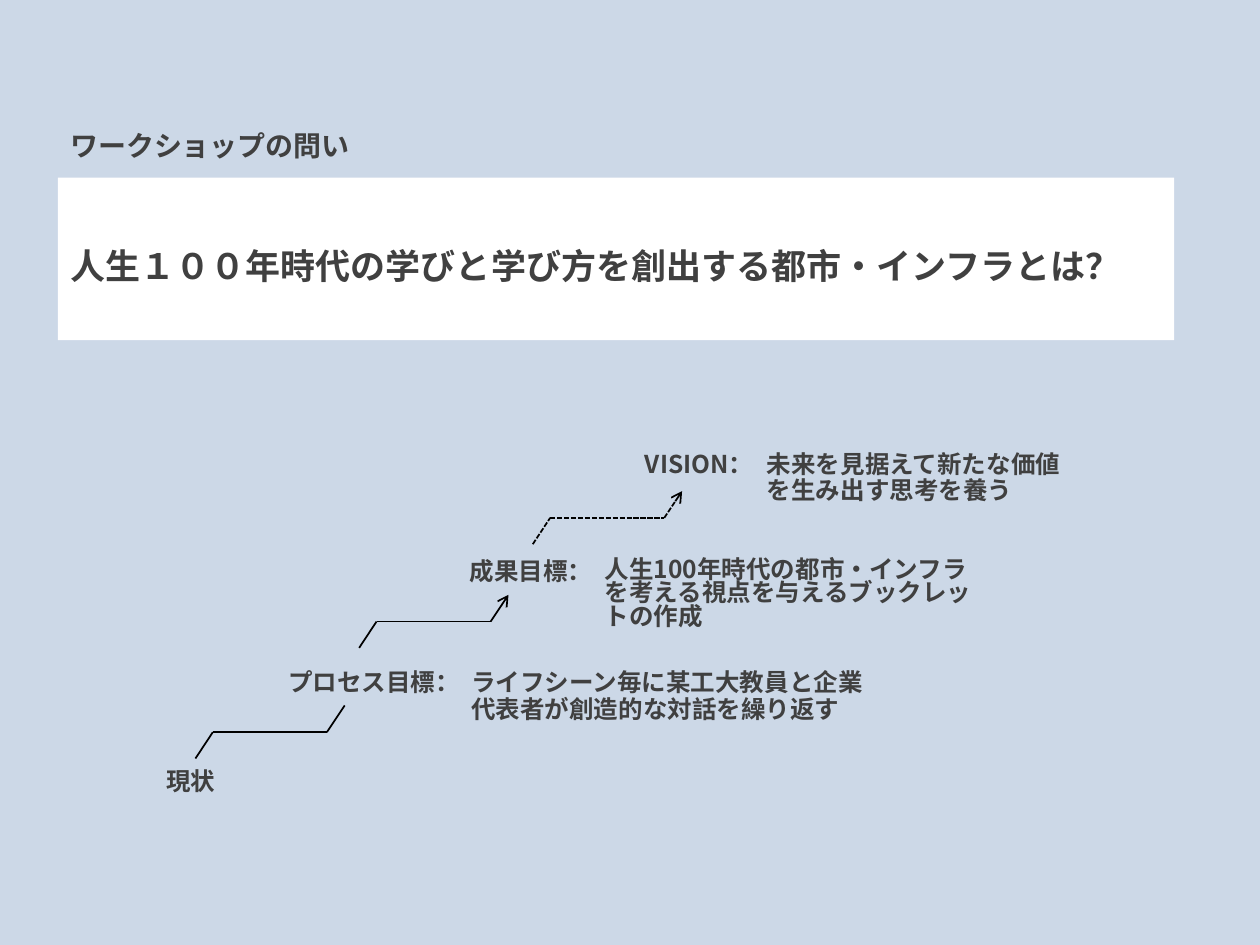
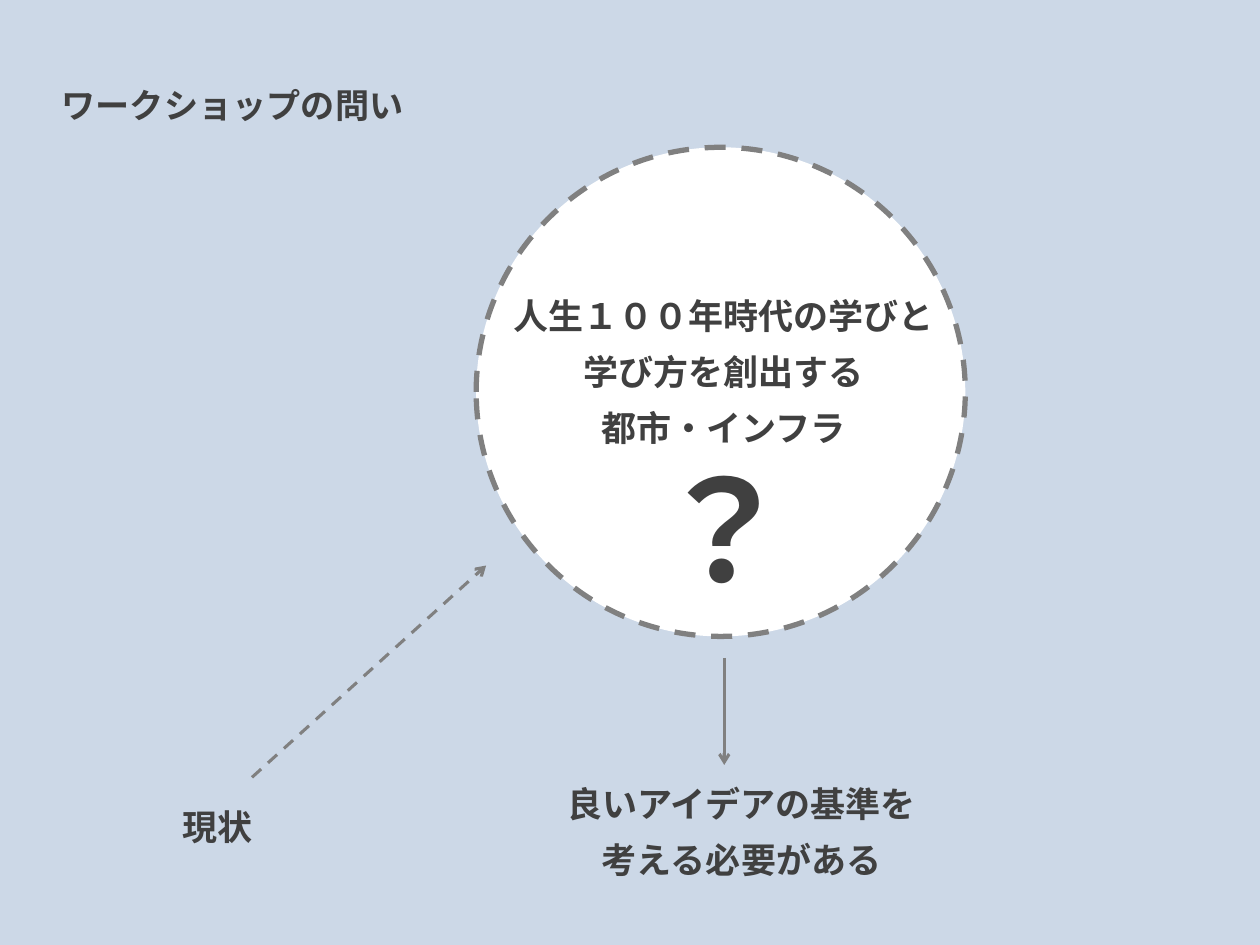
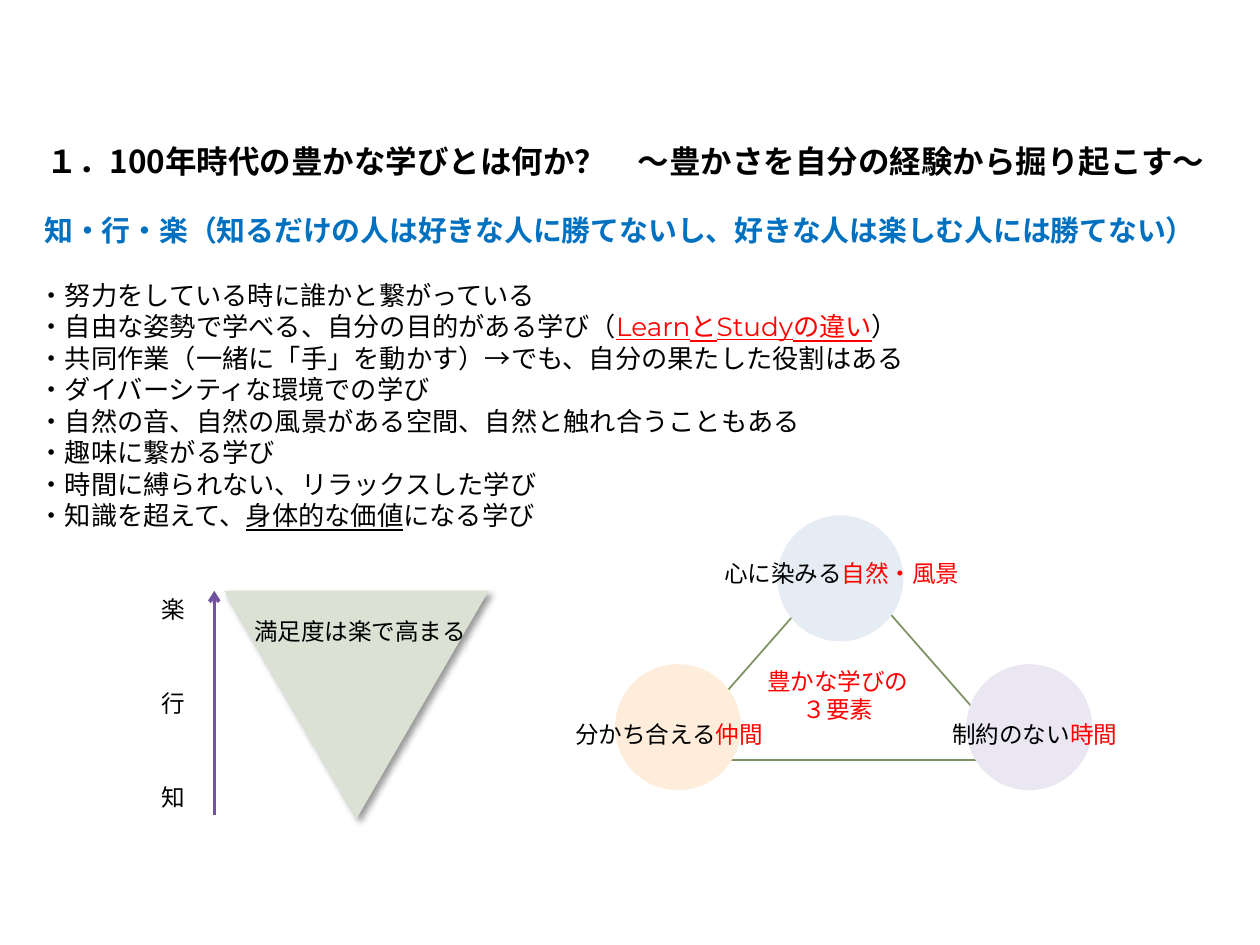
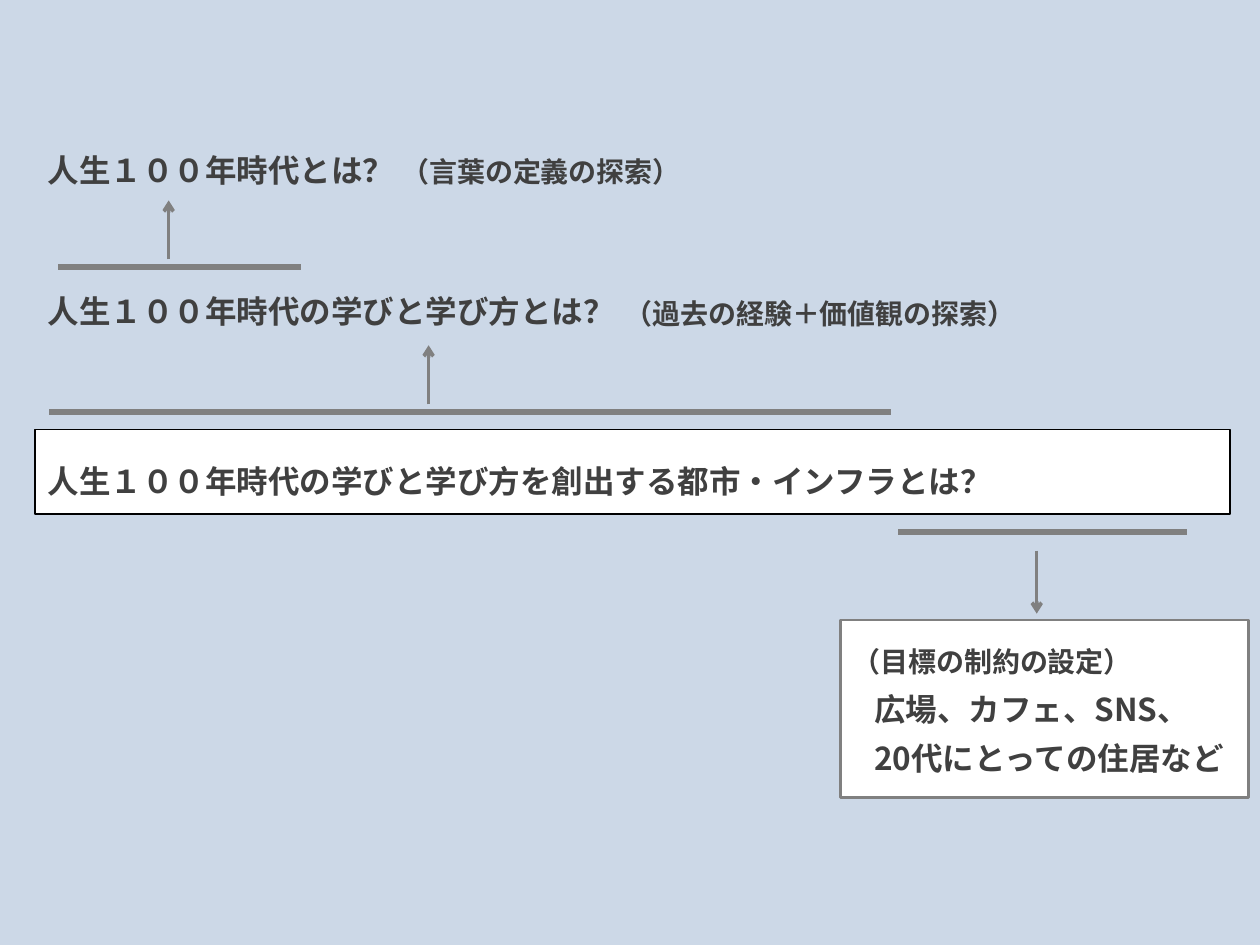
from dataclasses import dataclass

from lxml.etree import SubElement
from pptx import Presentation
from pptx.dml.color import RGBColor
from pptx.enum.dml import MSO_LINE
from pptx.enum.shapes import MSO_CONNECTOR, MSO_SHAPE
from pptx.enum.text import MSO_ANCHOR, MSO_AUTO_SIZE, PP_ALIGN
from pptx.oxml.ns import qn
from pptx.util import Cm, Pt


@dataclass(frozen=True)
class Theme:
    font: str = "Noto Sans CJK JP"
    latin: str = "Montserrat"
    bg: str = "CCD8E7"
    white: str = "FFFFFF"
    black: str = "000000"
    dark: str = "404040"
    gray: str = "808080"
    red: str = "FF0000"
    blue: str = "0070C0"
    green: str = "7D9263"
    pale_green: str = "DBE1D3"
    pale_blue: str = "E6ECF3"
    pale_purple: str = "EBE7F2"
    pale_orange: str = "FDEDDA"
    purple: str = "7153A1"
    mark: float = 80
    title: float = 20
    header: float = 19.5
    heading: float = 18
    quote: float = 16.5
    note: float = 16
    body: float = 15
    label: float = 14
    caption: float = 13.5


T = Theme()
TIGHT = {"spacing": 0.9, "before": 10}
MIDDLE = {"anchor": MSO_ANCHOR.MIDDLE, "spacing": Pt(32)}
CENTER = {**MIDDLE, "align": PP_ALIGN.CENTER}
PLAIN = {"color": T.black, "bold": False, "grow": True}


def box(shapes, at, paras=(), size=T.title, kind=None, fill=None, line=None, width=1, dash=None,
        anchor=MSO_ANCHOR.TOP, align=PP_ALIGN.LEFT, spacing=None, before=0,
        color=T.dark, bold=True, grow=False):
    """Add a text box, or a preset shape; a paragraph is a string or a list of (text, options)."""
    at = [Cm(v) for v in at]
    if kind is None:
        sp = shapes.add_textbox(*at)
    else:
        sp = shapes.add_shape(kind, *at)
        sp.shadow.inherit = False
        if fill:
            sp.fill.solid()
            sp.fill.fore_color.rgb = RGBColor.from_string(fill)
        else:
            sp.fill.background()
        if line:
            sp.line.color.rgb = RGBColor.from_string(line)
            sp.line.width = Pt(width)
            sp.line.dash_style = dash
        else:
            sp.line.fill.background()
    tf = sp.text_frame
    tf.word_wrap = True
    tf.vertical_anchor = anchor
    if grow:
        tf.auto_size = MSO_AUTO_SIZE.SHAPE_TO_FIT_TEXT
    for i, para in enumerate(paras):
        p = tf.add_paragraph() if i else tf.paragraphs[0]
        p.alignment, p.line_spacing, p.space_before = align, spacing, Pt(before)
        for text, opts in [(para, {})] if isinstance(para, str) else para:
            if text == "\n":
                p.add_line_break()
                continue
            r = p.add_run()
            r.text = text
            r.font.size = Pt(opts.get("size", size))
            r.font.bold = opts.get("bold", bold)
            r.font.underline = opts.get("underline")
            r.font.color.rgb = RGBColor.from_string(opts.get("color", color))
            r.font.name = opts.get("font", T.font)
            SubElement(r._r.get_or_add_rPr(), qn("a:ea"), typeface=T.font)
    return sp


def connect(shapes, start, end, color=T.gray, width=2, dash=None, arrow=True):
    ends = [Cm(v) for v in (*start, *end)]
    cn = shapes.add_connector(MSO_CONNECTOR.STRAIGHT, *ends)
    cn.line.color.rgb = RGBColor.from_string(color)
    cn.line.width = Pt(width)
    cn.line.dash_style = dash
    if arrow:
        SubElement(cn.line._get_or_add_ln(), qn("a:tailEnd"), type="arrow")
    SubElement(cn._element.spPr, qn("a:effectLst"))


prs = Presentation()
prs.slide_width, prs.slide_height = Cm(25.4), Cm(19.05)
blank = prs.slide_layouts[6]
master_fill = prs.slide_master.background.fill
master_fill.solid()
master_fill.fore_color.rgb = RGBColor.from_string(T.bg)

# Slide 1: workshop question and steps to the vision
shapes = prs.slides.add_slide(blank).shapes
box(shapes, (1.17, 3.58, 22.5, 3.28), ["人生１００年時代の学びと学び方を創出する都市・インフラとは？"],
    kind=MSO_SHAPE.RECTANGLE, fill=T.white, **MIDDLE)
box(shapes, (1.17, 2.36, 14.96, 1.22), ["ワークショップの問い"], T.note,
    **{**TIGHT, "anchor": MSO_ANCHOR.MIDDLE})

# Step names
for x, y, w, name in [
    (12.75, 8.99, 2.79, "VISION："),
    (9.22, 11.15, 3.33, "成果目標："),
    (5.56, 13.39, 4.67, "プロセス目標："),
    (3.1, 15.39, 2.01, "現状"),
]:
    box(shapes, (x, y, w, 0.84), [name], T.label, **TIGHT)

# Step descriptions
for x, y, w, spacing, goal in [
    (15.21, 8.99, 6.53, 0.9, "未来を見据えて新たな価値を生み出す思考を養う"),
    (11.94, 11.15, 7.92, 0.8, "人生100年時代の都市・インフラを考える視点を与えるブックレットの作成"),
    (9.25, 13.39, 8.76, 0.9, "ライフシーン毎に某工大教員と企業代表者が創造的な対話を繰り返す"),
]:
    box(shapes, (x, y, w, 1.7), [goal], T.label, spacing=spacing, before=10)

# Stair lines
stair = [(0, 0), (0.35, -0.53), (2.65, -0.53), (3.01, -1.07)]
for x, y, dash, arrow in [
    (3.94, 15.29, None, False),
    (7.24, 13.06, None, True),
    (10.74, 10.97, MSO_LINE.SQUARE_DOT, True),
]:
    grp = shapes.add_group_shape()
    pts = [(x + dx, y + dy) for dx, dy in stair]
    for i in range(3):
        connect(grp.shapes, pts[i], pts[i + 1], T.black, 1, dash, arrow and i == 2)

# Slide 2: the question as a circle
shapes = prs.slides.add_slide(blank).shapes
box(shapes, (9.6, 2.97, 9.86, 9.86), kind=MSO_SHAPE.OVAL, fill=T.white,
    line=T.gray, width=3, dash=MSO_LINE.DASH)
box(shapes, (0.99, 1.09, 17.65, 1.88), ["ワークショップの問い"], T.header,
    anchor=MSO_ANCHOR.MIDDLE, spacing=1.2)
box(shapes, (9.8, 5.31, 9.58, 4.09),
    [[("人生１００年時代の学びと学び方を創出する", {}), ("\n", {}), ("都市・インフラ", {})]], **CENTER)
box(shapes, (12.93, 9.55, 2.57, 4.37), ["？"], T.mark, **MIDDLE)
box(shapes, (3.43, 16.21, 2.01, 0.84), ["現状"], **TIGHT)
box(shapes, (10.16, 14.58, 9.58, 4.09), ["良いアイデアの基準を", "考える必要がある"], **CENTER)
connect(shapes, (5.08, 15.67), (9.8, 11.4), width=1.75, dash=MSO_LINE.DASH)
connect(shapes, (14.6, 13.26), (14.6, 15.42), width=1.75)

# Slide 3: what rich learning is
sl = prs.slides.add_slide(blank)
sl.background.fill.solid()
sl.background.fill.fore_color.rgb = RGBColor.from_string(T.white)
shapes = sl.shapes
box(shapes, (13.44, 11.28, 7.09, 4.04), kind=MSO_SHAPE.ISOSCELES_TRIANGLE, line=T.green)
for x, y, fill in [(15.67, 10.39, T.pale_blue), (19.48, 13.39, T.pale_purple),
                   (12.4, 13.39, T.pale_orange)]:
    box(shapes, (x, y, 2.54, 2.54), kind=MSO_SHAPE.OVAL, fill=fill)

# Heading and bullet list
red = {"color": T.red}
link = {**red, "underline": True}
link_latin = {**link, "font": T.latin}
box(shapes, (0.69, 2.74, 23.93, 1.02),
    ["１．100年時代の豊かな学びとは何か？　～豊かさを自分の経験から掘り起こす～"],
    T.heading, color=T.black, grow=True)
sp = box(shapes, (0.53, 4.17, 23.93, 6.73), [
    [("知・行・楽（知るだけの人は好きな人に勝てないし、好きな人は楽しむ人には勝てない）",
      {"size": T.quote, "color": T.blue, "bold": True})],
    "・努力をしている時に誰かと繋がっている",
    [("・自由な姿勢で学べる、自分の目的がある学び（", {}), ("Learn", link_latin), ("と", link),
     ("Study", link_latin), ("の違い", link), ("）", {})],
    "・共同作業（一緒に「手」を動かす）→でも、自分の果たした役割はある",
    "・ダイバーシティな環境での学び",
    "・自然の音、自然の風景がある空間、自然と触れ合うこともある",
    "・趣味に繋がる学び",
    "・時間に縛られない、リラックスした学び",
    [("・知識を超えて、", {}), ("身体的な価値", {"underline": True}), ("になる学び", {})],
], T.body, **PLAIN)
quote, *bullets = sp.text_frame.paragraphs
quote.alignment = PP_ALIGN.CENTER
bullets[0].space_before = Pt(18)
for p in bullets:
    pPr = p._p.get_or_add_pPr()
    pPr.set("marL", str(Cm(0.38)))
    pPr.set("indent", str(-Cm(0.38)))

# Satisfaction scale
for i, level in enumerate("楽行知"):
    box(shapes, (3, 11.86 + 1.9 * i, 3.05, 0.84), [level], T.caption, **PLAIN)
sp = box(shapes, (4.52, 11.91, 5.33, 4.6), kind=MSO_SHAPE.ISOSCELES_TRIANGLE, fill=T.pale_green)
sp.rotation = 180
shadow = SubElement(sp._element.spPr.find(qn("a:effectLst")), qn("a:outerShdw"),
                    blurRad=str(Pt(4)), dist=str(Pt(3)), dir=str(45 * 60000),
                    algn="ctr", rotWithShape="0")
SubElement(SubElement(shadow, qn("a:srgbClr"), val=T.black), qn("a:alpha"), val="40000")

# Three elements
for x, y, w, text, key in [
    (14.35, 11.15, 6.22, "心に染みる", "自然・風景"),
    (11.35, 14.38, 4.62, "分かち合える", "仲間"),
    (18.95, 14.38, 4.62, "制約のない", "時間"),
]:
    box(shapes, (x, y, w, 0.84), [[(text, {}), (key, red)]], T.caption, **PLAIN)
connect(shapes, (4.32, 16.43), (4.32, 11.91), T.purple)
box(shapes, (4.88, 12.32, 5.82, 0.84), ["満足度は楽で高まる"], T.caption, **PLAIN)
box(shapes, (14.58, 13.31, 4.62, 1.42), ["豊かな学びの", "３要素"], T.caption,
    align=PP_ALIGN.CENTER, **{**PLAIN, **red})

# Slide 4: breaking the question down
shapes = prs.slides.add_slide(blank).shapes
box(shapes, (0.71, 8.66, 24.08, 1.7), ["人生１００年時代の学びと学び方を創出する都市・インフラとは？"],
    T.heading, MSO_SHAPE.RECTANGLE, T.white, T.black, **MIDDLE)
for y, question in [(5.23, "人生１００年時代の学びと学び方とは？"), (2.39, "人生１００年時代とは？")]:
    box(shapes, (0.71, y, 24.08, 1.7), [question], T.heading, **MIDDLE)
for x, y, w, note in [(11.76, 5.49, 9.55, "（過去の経験＋価値観の探索）"),
                      (7.19, 2.62, 7.44, "（言葉の定義の探索）")]:
    box(shapes, (x, y, w, 1.22), [note], T.note, **CENTER)

# Bars under the key words, each with its arrow
for left, right, y, x, tail, head in [
    (0.99, 17.96, 8.31, 8.64, 8.15, 6.96),
    (1.17, 6.07, 5.38, 3.4, 5.23, 4.04),
    (18.11, 23.93, 10.72, 20.9, 11.1, 12.37),
]:
    if left == 1.17:
        right, y = y + 0.69, right - 0.69
    connect(shapes, (left, y), (right, y), width=3.5, arrow=False)
    connect(shapes, (x, tail), (x, head))

# Goal limits
box(shapes, (16.94, 12.5, 8.23, 3.58), kind=MSO_SHAPE.RECTANGLE, fill=T.white,
    line=T.gray, width=1.5)
box(shapes, (17.37, 13.31, 8.03, 2.74), ["広場、カフェ、SNS、", "20代にとっての住居など"], T.heading,
    anchor=MSO_ANCHOR.MIDDLE, spacing=Pt(28))
box(shapes, (16.94, 12.5, 6.38, 1.22), ["（目標の制約の設定）"], T.note, **MIDDLE)

prs.save("out.pptx")
